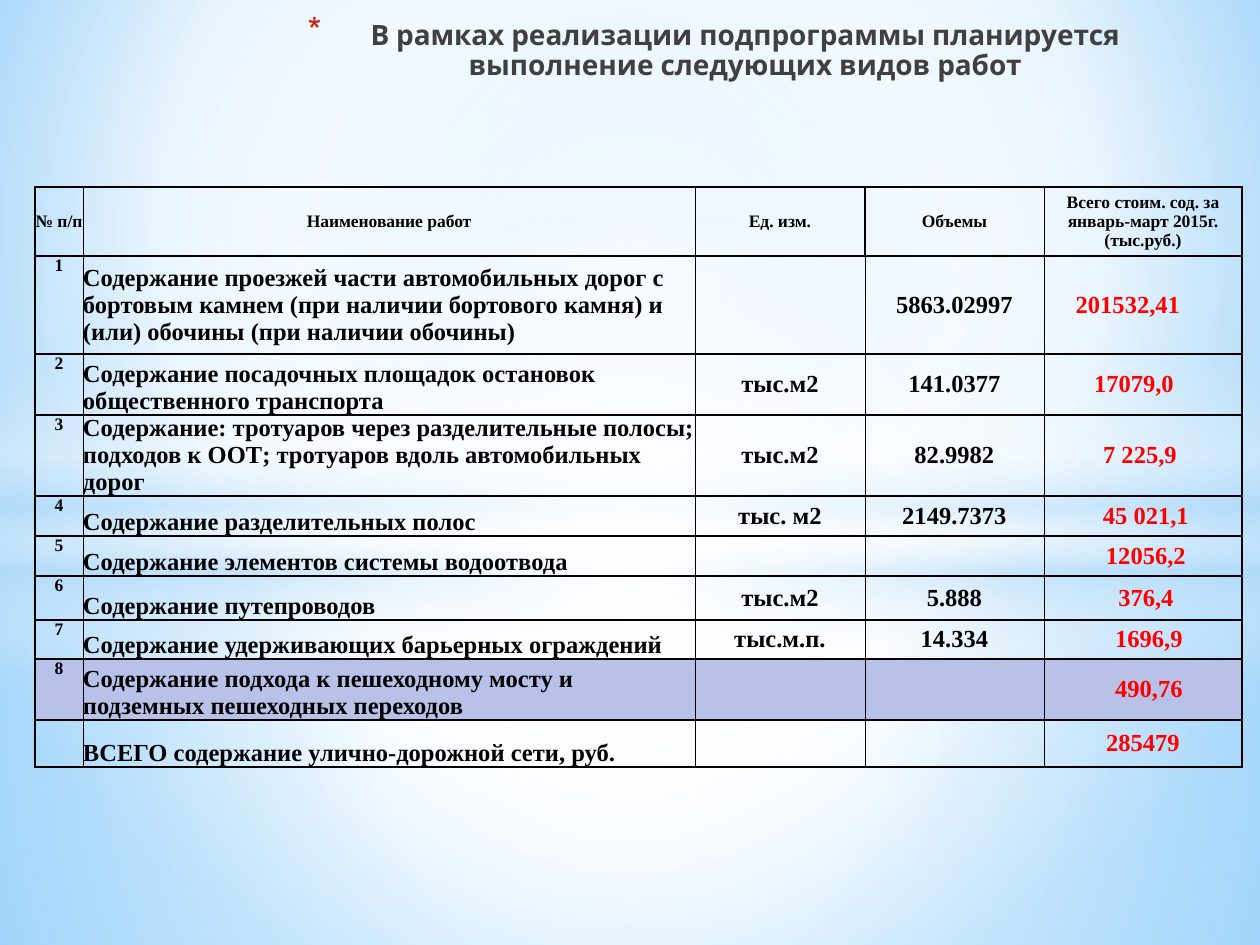
from dataclasses import dataclass

from pptx import Presentation
from pptx.dml.color import RGBColor
from pptx.enum.shapes import MSO_SHAPE
from pptx.enum.text import MSO_ANCHOR, MSO_AUTO_SIZE, PP_ALIGN
from pptx.oxml import parse_xml
from pptx.oxml.ns import nsdecls
from pptx.util import Pt

PX = 914400 / 126


@dataclass(frozen=True)
class Theme:
    title_font: str = "Karla"
    table_font: str = "Times New Roman"
    title_size: int = 16
    header_size: int = 10
    body_size: int = 14
    title_color: str = "404040"
    bullet_color: str = "C3260C"
    ink: str = "000000"
    cost_color: str = "FF0000"
    highlight: str = "B8C2E9"
    thin: float = 0.5
    thick: float = 1


THEME = Theme()
TITLE = "В рамках реализации подпрограммы планируется выполнение следующих видов работ"
TITLE_BOX = (253, 16, 897, 73)
TABLE_ORIGIN = (35, 187)
COLUMN_WIDTHS = (48, 612, 170, 179, 198)
ROW_HEIGHTS = (69, 98, 61, 77, 40, 40, 44, 39, 61, 47)
HIGHLIGHTED_ROW = 8
COST_COLUMN = 4

ROWS = [
    ("№ п/п", "Наименование работ", "Ед. изм.", "Объемы",
     "Всего стоим. сод. за январь-март 2015г.(тыс.руб.)"),
    ("1", "Содержание проезжей части автомобильных дорог с бортовым камнем "
     "(при наличии бортового камня) и (или) обочины (при наличии обочины)",
     "", "5863.02997", "201532,41"),
    ("2", "Содержание посадочных площадок остановок общественного транспорта",
     "тыс.м2", "141.0377", "17079,0"),
    ("3", "Содержание: тротуаров через разделительные полосы; подходов к ООТ; "
     "тротуаров вдоль автомобильных дорог", "тыс.м2", "82.9982", "7 225,9"),
    ("4", "Содержание разделительных полос", "тыс. м2", "2149.7373", "45 021,1"),
    ("5", "Содержание элементов системы водоотвода", "", "", "12056,2"),
    ("6", "Содержание путепроводов", "тыс.м2", "5.888", "376,4"),
    ("7", "Содержание удерживающих барьерных ограждений", "тыс.м.п.", "14.334", "1696,9"),
    ("8", "Содержание подхода к пешеходному мосту и подземных пешеходных переходов",
     "", "", "490,76"),
    ("", "ВСЕГО содержание улично-дорожной сети, руб.", "", "", "285479"),
]
COST_SHIFTS = (0, -15, -9, -3, 3, 3, 3, 6, 6, 0)

CENTER = (50, 50, 50, 50)
BACKGROUND = ([(0, "9ED5FF", 100), (60, "FFFFFF", 100), (100, "5BB9FF", 100)], (20, 10, 20, 60))
GLOWS = [
    (MSO_SHAPE.RECTANGLE, (0, 533, 1260, 412),
     [(0, "FFFFFF", 91), (37, "FFFFFF", 76), (100, "B4DCFA", 79)], CENTER),
    (MSO_SHAPE.RECTANGLE, (0, 0, 1260, 533),
     [(0, "FFFFFF", 89), (48, "FFFFFF", 62), (100, "B4DCFA", 79)], CENTER),
    (MSO_SHAPE.RECTANGLE, (0, 365, 1260, 315),
     [(0, "FFFFFF", 0), (29, "FFFFFF", 30), (45, "B4DCFA", 40),
      (55, "FFFFFF", 26), (65, "B4DCFA", 60), (100, "FFFFFF", 0)], None),
    (MSO_SHAPE.OVAL, (0, 221, 1260, 703),
     [(0, "FFFFFF", 100), (54, "FFFFFF", 0)], CENTER),
]


def px(*lengths):
    return [round(length * PX) for length in lengths]


def gradient_xml(stops, focus):
    stop_xml = "".join(
        f'<a:gs pos="{position * 1000}"><a:srgbClr val="{color}">'
        f'<a:alpha val="{opacity * 1000}"/></a:srgbClr></a:gs>'
        for position, color, opacity in stops)
    if focus:
        sides = " ".join(f'{side}="{value * 1000}"' for side, value in zip("ltrb", focus))
        direction = f'<a:path path="circle"><a:fillToRect {sides}/></a:path>'
    else:
        direction = '<a:lin ang="5400000" scaled="0"/>'
    return f'<a:gradFill {nsdecls("a")} rotWithShape="1"><a:gsLst>{stop_xml}</a:gsLst>{direction}</a:gradFill>'


def style_paragraph(paragraph, font_name, size, color, alignment):
    paragraph.alignment = alignment
    for run in paragraph.runs:
        run.font.name = font_name
        run.font.size = Pt(size)
        run.font.bold = True
        run.font.color.rgb = RGBColor.from_string(color)


def add_background(slide):
    slide.element.cSld.insert(0, parse_xml(
        f'<p:bg {nsdecls("p", "a")}><p:bgPr>{gradient_xml(*BACKGROUND)}<a:effectLst/></p:bgPr></p:bg>'))
    for kind, box, stops, focus in GLOWS:
        shape = slide.shapes.add_shape(kind, *px(*box))
        shape.shadow.inherit = False
        shape.line.fill.background()
        shape.fill.solid()
        properties = shape.element.spPr
        properties.replace(properties.find("{*}solidFill"), parse_xml(gradient_xml(stops, focus)))


def add_title(slide):
    title = slide.shapes.title
    title.element.getparent().append(title.element)
    title.left, title.top, title.width, title.height = px(*TITLE_BOX)
    frame = title.text_frame
    frame.text = TITLE
    frame.word_wrap = True
    frame.auto_size = MSO_AUTO_SIZE.NONE
    frame.vertical_anchor = MSO_ANCHOR.TOP
    paragraph = frame.paragraphs[0]
    style_paragraph(paragraph, THEME.title_font, THEME.title_size, THEME.title_color, PP_ALIGN.CENTER)
    paragraph.line_spacing = 0.88
    properties = paragraph.runs[0].font._element.getparent().getparent().pPr
    indent, = px(63)
    margin, = px(88)
    properties.set("marL", str(margin))
    properties.set("indent", str(-indent))
    for bullet in (f'<a:buClr {nsdecls("a")}><a:srgbClr val="{THEME.bullet_color}"/></a:buClr>',
                   f'<a:buSzPct {nsdecls("a")} val="128000"/>',
                   f'<a:buChar {nsdecls("a")} char="*"/>'):
        properties.append(parse_xml(bullet))


def set_borders(cell, row, column):
    header_divider = row == 0
    left_thick = column == 0 or header_divider and column == 3
    right_thick = column == COST_COLUMN or header_divider and column == 2
    widths = {"L": THEME.thick if left_thick else THEME.thin,
              "R": THEME.thick if right_thick else THEME.thin,
              "T": THEME.thick, "B": THEME.thick}
    properties = cell._tc.get_or_add_tcPr()
    for side, width in widths.items():
        properties.append(parse_xml(
            f'<a:ln{side} {nsdecls("a")} w="{Pt(width)}"><a:solidFill>'
            f'<a:srgbClr val="{THEME.ink}"/></a:solidFill></a:ln{side}>'))


def format_cell(cell, row, column):
    shift = COST_SHIFTS[row] if column == COST_COLUMN else 0
    cell.margin_left, cell.margin_right = px(max(0, 2 * shift), max(0, -2 * shift))
    cell.margin_top = cell.margin_bottom = 0
    is_name = column == 1 and row > 0
    if column == 0 and row > 0:
        cell.vertical_anchor = MSO_ANCHOR.TOP
    else:
        cell.vertical_anchor = MSO_ANCHOR.BOTTOM if is_name and row > 1 else MSO_ANCHOR.MIDDLE
    style_paragraph(
        cell.text_frame.paragraphs[0], THEME.table_font,
        THEME.header_size if row == 0 or column == 0 else THEME.body_size,
        THEME.cost_color if row > 0 and column == COST_COLUMN else THEME.ink,
        PP_ALIGN.LEFT if is_name else PP_ALIGN.CENTER)
    set_borders(cell, row, column)
    if row == HIGHLIGHTED_ROW:
        cell.fill.solid()
        cell.fill.fore_color.rgb = RGBColor.from_string(THEME.highlight)
    else:
        cell.fill.background()


def add_works_table(slide):
    size = (sum(COLUMN_WIDTHS), sum(ROW_HEIGHTS))
    table = slide.shapes.add_table(len(ROWS), len(COLUMN_WIDTHS), *px(*TABLE_ORIGIN, *size)).table
    table.first_row = table.horz_banding = False
    for column, width in zip(table.columns, px(*COLUMN_WIDTHS)):
        column.width = width
    for row, height in zip(table.rows, px(*ROW_HEIGHTS)):
        row.height = height
    for row, values in enumerate(ROWS):
        for column, value in enumerate(values):
            cell = table.cell(row, column)
            cell.text_frame.text = value
            format_cell(cell, row, column)


def main():
    presentation = Presentation()
    presentation.slide_width, presentation.slide_height = px(1260, 945)
    slide = presentation.slides.add_slide(presentation.slide_layouts[5])
    add_background(slide)
    add_title(slide)
    add_works_table(slide)
    presentation.save("out.pptx")


if __name__ == "__main__":
    main()
